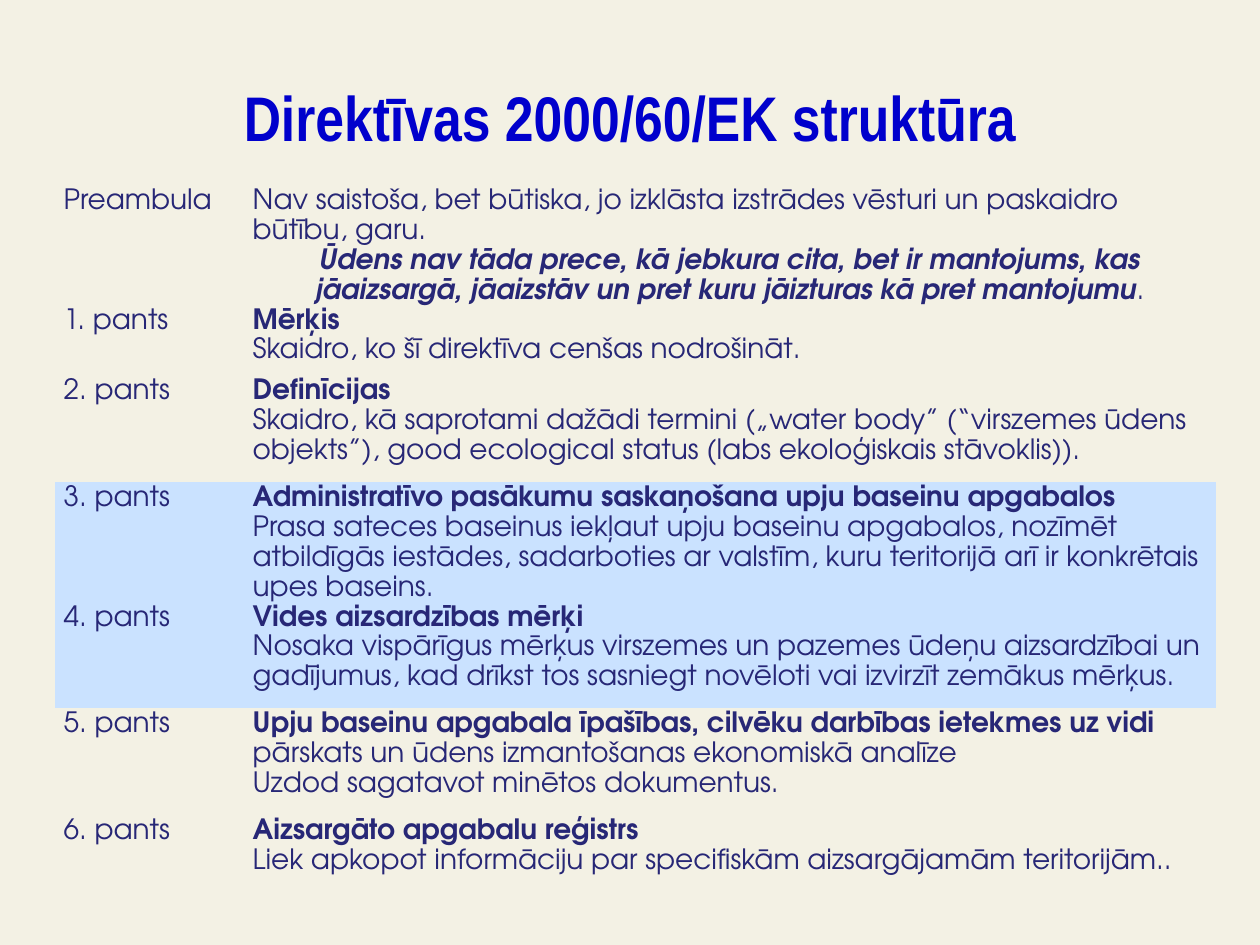
from pptx import Presentation
from pptx.dml.color import RGBColor
from pptx.enum import text as tx
from pptx.oxml.ns import qn
from pptx.util import Pt

INK, CREAM, SKY = "272776", "F3F1E4", "CAE2FF"
NO_GRID = "{2D5ABB26-0587-4C30-8999-92F81FD0307C}"

# label, row height, fill, bold heading, plain lines
ROWS = [
    ("1. pants", 40.5, None, "Mērķis",
     ["Skaidro, ko šī direktīva cenšas nodrošināt."]),
    ("2. pants", 61, None, "Definīcijas",
     ["Skaidro, kā saprotami dažādi termini („water body” (“virszemes ūdens "
      "objekts”), good ecological status (labs ekoloģiskais stāvoklis))."]),
    ("3. pants", 61, SKY,
     "Administratīvo pasākumu saskaņošana upju baseinu apgabalos",
     ["Prasa sateces baseinus iekļaut upju baseinu apgabalos, nozīmēt "
      "atbildīgās iestādes, sadarboties ar valstīm, kuru teritorijā arī ir "
      "konkrētais upes baseins."]),
    ("4. pants", 61, SKY, "Vides aizsardzības mērķi",
     ["Nosaka vispārīgus mērķus virszemes un pazemes ūdeņu aizsardzībai un "
      "gadījumus, kad drīkst tos sasniegt novēloti vai izvirzīt zemākus "
      "mērķus."]),
    ("5. pants", 61, CREAM,
     "Upju baseinu apgabala īpašības, cilvēku darbības ietekmes uz vidi",
     ["pārskats un ūdens izmantošanas ekonomiskā analīze",
      "Uzdod sagatavot minētos dokumentus."]),
    ("6. pants", 40.5, None, "Aizsargāto apgabalu reģistrs",
     ["Liek apkopot informāciju par specifiskām aizsargājamām "
      "teritorijām.."]),
]
INTRO = ("Nav saistoša, bet būtiska, jo izklāsta izstrādes vēsturi un "
         "paskaidro būtību, garu.")
QUOTE = ["Ūdens nav tāda prece, kā jebkura cita, bet ir mantojums, kas",
         "jāaizsargā, jāaizstāv un pret kuru jāizturas kā pret mantojumu"]


def color(code):
    return RGBColor.from_string(code)


def style(font, name, size, code, bold=False):
    font.name, font.size, font.bold = name, Pt(size), bold
    font.color.rgb = color(code)


def add_title(slide, words):
    title = slide.shapes.title
    title.left, title.top = Pt(36), Pt(21.6)
    title.width, title.height = Pt(648), Pt(90)
    title.text_frame.vertical_anchor = tx.MSO_ANCHOR.MIDDLE
    title.text_frame.text = words
    para = title.text_frame.paragraphs[0]
    para.alignment = tx.PP_ALIGN.CENTER
    style(para.font, "Arial Narrow", 36, "0000CC", True)


def add_grid(slide, highs):
    frame = slide.shapes.add_table(len(highs), 2, Pt(31.2), Pt(105.8),
                                   Pt(663.6), Pt(sum(highs)))
    grid = frame.table
    grid.first_row = grid.horz_banding = False
    grid._tbl.tblPr.find(qn("a:tableStyleId")).text = NO_GRID
    for col, wide in zip(grid.columns, (108, 555.6)):
        col.width = Pt(wide)
    for row, high in zip(grid.rows, highs):
        row.height = Pt(high)
    return grid


def fill_cell(cell, lines, fill=None):
    """Write (words, bold) lines into a cell and return its paragraphs."""
    cell.margin_left = cell.margin_right = Pt(5.2)
    cell.margin_top = cell.margin_bottom = 0
    if fill:
        cell.fill.solid()
        cell.fill.fore_color.rgb = color(fill)
    else:
        cell.fill.background()
    frame = cell.text_frame
    frame.text = "\n".join(words for words, _ in lines)
    for para, (_, bold) in zip(frame.paragraphs, lines):
        para.line_spacing = 1.15
        style(para.font, "TeX Gyre Adventor", 16, INK, bold)
    return frame.paragraphs


def add_preamble(grid):
    fill_cell(grid.cell(0, 0), [("Preambula", False)])
    lines = [(INTRO, False)] + [(words, True) for words in QUOTE]
    quote = fill_cell(grid.cell(0, 1), lines)[1:]
    for para in quote:
        para.alignment = tx.PP_ALIGN.CENTER
        para.font.italic = True
    stop = quote[-1].add_run()
    stop.text = "."
    stop.font.bold = stop.font.italic = False


def main():
    deck = Presentation()
    deck.slide_width, deck.slide_height = Pt(720), Pt(540)
    slide = deck.slides.add_slide(deck.slide_layouts[5])
    slide.background.fill.solid()
    slide.background.fill.fore_color.rgb = color(CREAM)
    add_title(slide, "Direktīvas 2000/60/EK struktūra")
    grid = add_grid(slide, [67.7] + [row[1] for row in ROWS])
    add_preamble(grid)
    for at, (label, _, fill, head, body) in enumerate(ROWS, 1):
        fill_cell(grid.cell(at, 0), [(label, False)], fill)
        lines = [(head, True)] + [(words, False) for words in body]
        fill_cell(grid.cell(at, 1), lines, fill)
    deck.save("out.pptx")


if __name__ == "__main__":
    main()
